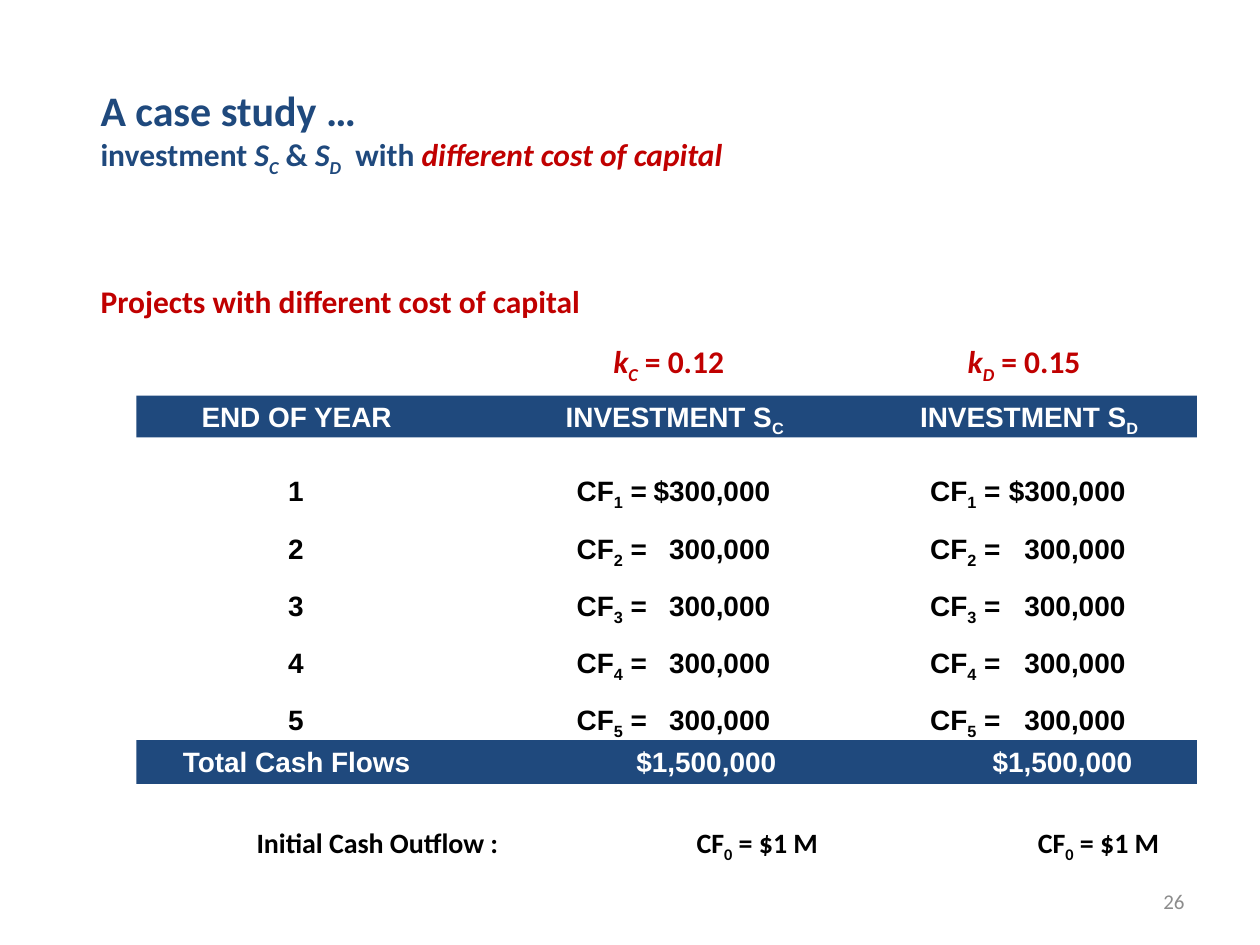
from lxml import etree
from pptx import Presentation
from pptx import util as u
from pptx.dml.color import RGBColor
from pptx.enum import shapes, text
from pptx.oxml.ns import qn

NAVY, RED, BLACK, WHITE, GREY = "1F497D", "C00000", "000000", "FFFFFF", "8C8C8C"
CENTRES = [(121.5, "ctr"), (337.5, "ctr"), (540, "ctr")]
TOTALS = [(121.5, "ctr"), (395.5, "r"), (599, "r")]
CASH_FLOWS = [(121.5, "ctr"), (282, "l"), (392.5, "r"), (484, "l"), (595.5, "r")]
OUTFLOWS = [(61, "l"), (312.5, "l"), (507.5, "l")]


def color(value):
    return RGBColor.from_string(value)


def write(p, words, size=16, font="Calibri", fill=BLACK, bold=True, italic=False):
    """Add words to a paragraph; an underscore lowers the next character."""
    first, *rest = words.split("_")
    pieces = [(first, False)]
    for part in rest:
        pieces += [(part[0], True), (part[1:], False)]
    for piece, lowered in pieces:
        if not piece:
            continue
        r = p.add_run()
        r.text = piece
        r.font.size, r.font.name = u.Pt(size), font
        r.font.bold, r.font.italic = bold, italic
        r.font.color.rgb = color(fill)
        if lowered:
            r.font._element.set("baseline", "-25000")


def set_tabs(p, stops):
    tabs = etree.SubElement(p._p.get_or_add_pPr(), qn("a:tabLst"))
    for pos, align in stops:
        etree.SubElement(tabs, qn("a:tab"), pos=str(int(u.Pt(pos))), algn=align)


def add_box(parent, box, anchor=text.MSO_ANCHOR.TOP, wrap=True):
    tf = parent.shapes.add_textbox(*map(u.Pt, box)).text_frame
    tf.word_wrap, tf.vertical_anchor = wrap, anchor
    return tf


def add_band(parent, box):
    sp = parent.shapes.add_shape(shapes.MSO_SHAPE.RECTANGLE, *map(u.Pt, box))
    sp.shadow.inherit = False
    sp.fill.solid()
    sp.fill.fore_color.rgb = color(NAVY)
    sp.line.fill.background()


def add_title(s, box):
    p = add_box(s, box).paragraphs[0]
    write(p, "A case study …", size=24, fill=NAVY)
    p.add_line_break()
    for words, fill, italic in [
        ("investment ", NAVY, False), ("S_C", NAVY, True), (" & ", NAVY, False),
        ("S_D ", NAVY, True), (" with ", NAVY, False),
        ("different cost of capital", RED, True),
    ]:
        write(p, words, size=18, fill=fill, italic=italic)


def add_rates(s, box):
    """Place the red heading and one cost of capital above each investment."""
    x, y, w, h = box
    heading = add_box(s, box, text.MSO_ANCHOR.BOTTOM)
    write(heading.paragraphs[0], "Projects with different cost of capital",
          size=18, fill=RED)
    for left, name, rate in [(293, "k_C", "0.12"), (495.5, "k_D", "0.15")]:
        p = add_box(s, (x + left, y + 34, 94, h), wrap=False).paragraphs[0]
        write(p, name, size=18, fill=RED, italic=True)
        write(p, f" = {rate}", size=18, fill=RED)


def add_cash_flows(s, box):
    x, y, w, h = box
    group = s.shapes.add_group_shape()

    # Header and total bands
    for dy, height, words, stops in [
        (0, 24, "\tEND OF YEAR\tINVESTMENT S_C\tINVESTMENT S_D", CENTRES),
        (197, 25, "\tTotal Cash Flows\t$1,500,000\t$1,500,000", TOTALS),
    ]:
        add_band(group, (x + 37, y + dy, 606, height))
        p = add_box(group, (x, y + dy - 1.2, w, 26.6)).paragraphs[0]
        set_tabs(p, stops)
        write(p, words, font="Arial", fill=WHITE)

    # Yearly rows
    tf = add_box(group, (x - 0.5, y + 30.3, w, 152))
    for year in range(1, 6):
        p = tf.paragraphs[0] if year == 1 else tf.add_paragraph()
        p.line_spacing = 1.5
        set_tabs(p, CASH_FLOWS)
        amount = "$300,000" if year == 1 else "300,000"
        flow = f"\tCF_{year} =\t{amount}"
        write(p, f"\t{year}{flow}{flow}", font="Arial")


def add_outflow(s, box):
    p = add_box(s, box, text.MSO_ANCHOR.MIDDLE).paragraphs[0]
    set_tabs(p, OUTFLOWS)
    write(p, "\tInitial Cash Outflow :\tCF_0 = $1 M\tCF_0 = $1 M")


def add_page_number(s, box):
    p = add_box(s, box, text.MSO_ANCHOR.MIDDLE).paragraphs[0]
    p.alignment = text.PP_ALIGN.RIGHT
    write(p, "26", size=12, fill=GREY, bold=False)


def main():
    prs = Presentation()
    prs.slide_width, prs.slide_height = u.Pt(720), u.Pt(540)
    s = prs.slides.add_slide(prs.slide_layouts[6])
    add_title(s, (50.4, 44.6, 669.6, 58.3))
    add_rates(s, (50.4, 157.7, 643, 28.8))
    add_cash_flows(s, (41, 226, 679, 222))
    add_outflow(s, (78.5, 469.4, 641.5, 26.6))
    add_page_number(s, (516, 500.4, 168, 28.8))
    prs.save("out.pptx")


if __name__ == "__main__":
    main()
